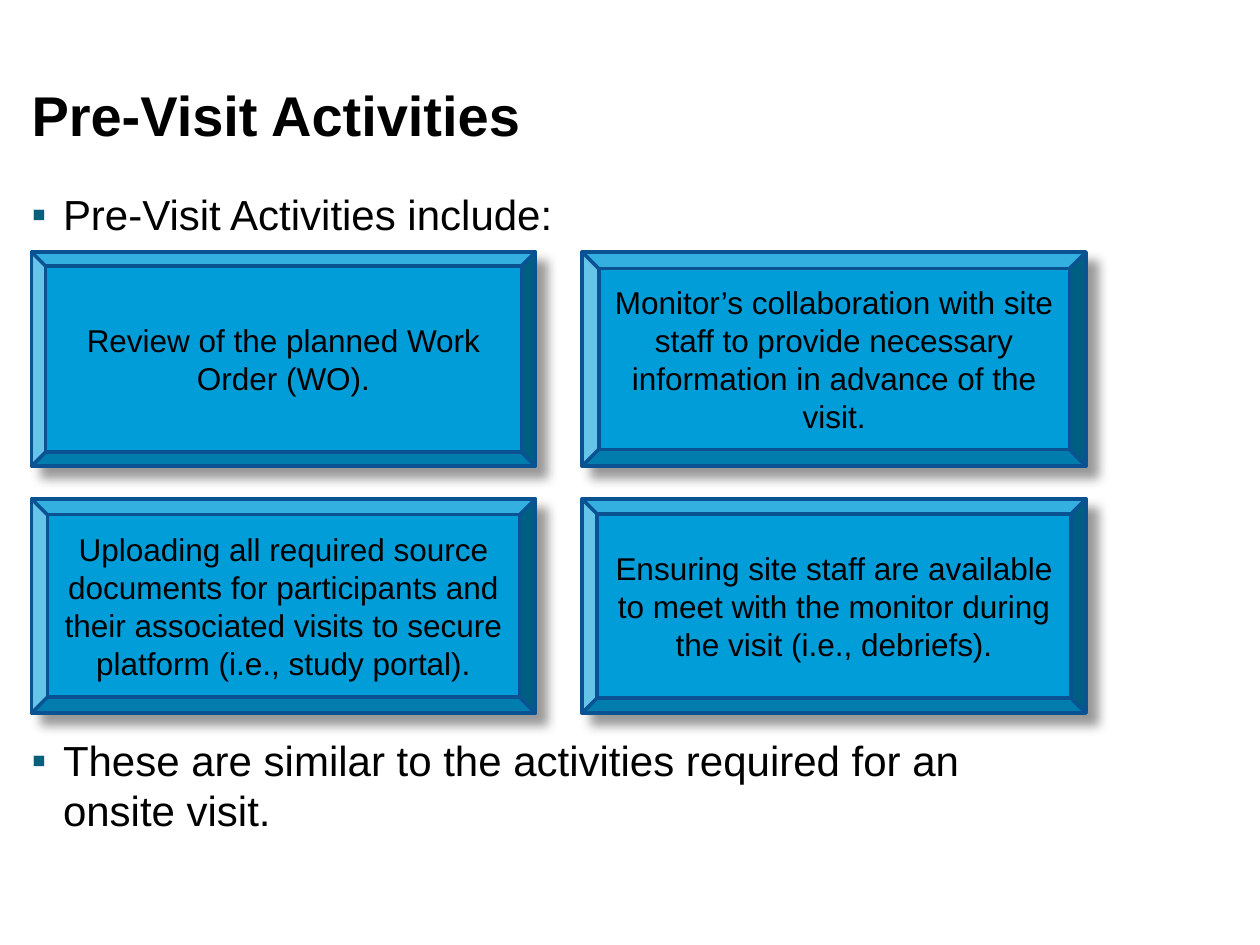
from lxml import etree
from pptx import Presentation
from pptx.dml.color import RGBColor
from pptx.enum.shapes import MSO_SHAPE
from pptx.enum.text import MSO_ANCHOR, PP_ALIGN
from pptx.oxml.ns import qn
from pptx.util import Inches, Pt

FONT = "Arial"
BLACK = "000000"
BULLET = "04617B"
TILE_FILL = "009DD9"
TILE_LINE = "0B5292"

LEFT = 0.25
TEXT_WIDTH = 8.25
TILE_WIDTH, TILE_HEIGHT = 4, 1.7
COLUMN_STEP, ROW_STEP = 4.37, 1.96

# Each row holds (text, bevel depth) for its tiles.
ACTIVITIES = [
    [
        ("Review of the planned Work Order (WO).", 0.066),
        ("Monitor’s collaboration with site staff to provide necessary "
         "information in advance of the visit.", 0.078),
    ],
    [
        ("Uploading all required source documents for participants and their "
         "associated visits to secure platform (i.e., study portal).", 0.074),
        ("Ensuring site staff are available to meet with the monitor during "
         "the visit (i.e., debriefs).", 0.07),
    ],
]


def color(hex_value):
    return RGBColor.from_string(hex_value)


def set_font(para, size, bold=False):
    para.font.name = FONT
    para.font.size = Pt(size)
    para.font.bold = bold
    para.font.color.rgb = color(BLACK)


def add_text(page, text, left, top, width, height):
    box = page.shapes.add_textbox(
        Inches(left), Inches(top), Inches(width), Inches(height))
    frame = box.text_frame
    frame.word_wrap = True
    frame.margin_left = frame.margin_right = 0
    frame.margin_top = frame.margin_bottom = 0
    frame.text = text
    return frame


def add_title(page, text, left, top, width, height):
    frame = add_text(page, text, left, top, width, height)
    frame.margin_top = Inches(0.05)
    frame.vertical_anchor = MSO_ANCHOR.BOTTOM
    set_font(frame.paragraphs[0], 32, bold=True)


def add_bullet(page, text, left, top, width, height):
    para = add_text(page, text, left, top, width, height).paragraphs[0]
    properties = para._p.get_or_add_pPr()
    properties.set("marL", str(Inches(0.25)))
    properties.set("indent", str(-Inches(0.25)))
    bullet_color = etree.SubElement(properties, qn("a:buClr"))
    etree.SubElement(bullet_color, qn("a:srgbClr"), val=BULLET)
    etree.SubElement(properties, qn("a:buFont"), typeface=FONT)
    etree.SubElement(properties, qn("a:buChar"), char="▪")
    set_font(para, 24)


def add_shadow(shape):
    """Give the shape a soft shadow to the lower right."""
    shape.shadow.inherit = False
    effects = shape._element.spPr.find(qn("a:effectLst"))
    shadow = etree.SubElement(
        effects, qn("a:outerShdw"), blurRad=str(Pt(6)), dist=str(Pt(8)),
        dir=str(45 * 60000), algn="tl", rotWithShape="0")
    shade = etree.SubElement(shadow, qn("a:srgbClr"), val=BLACK)
    etree.SubElement(shade, qn("a:alpha"), val="40000")


def add_tile(page, text, depth, left, top):
    tile = page.shapes.add_shape(
        MSO_SHAPE.BEVEL, Inches(left), Inches(top),
        Inches(TILE_WIDTH), Inches(TILE_HEIGHT))
    tile.adjustments[0] = depth
    tile.fill.solid()
    tile.fill.fore_color.rgb = color(TILE_FILL)
    tile.line.color.rgb = color(TILE_LINE)
    tile.line.width = Pt(2)
    add_shadow(tile)
    frame = tile.text_frame
    frame.word_wrap = True
    frame.vertical_anchor = MSO_ANCHOR.MIDDLE
    frame.text = text
    para = frame.paragraphs[0]
    para.alignment = PP_ALIGN.CENTER
    set_font(para, 18)


def add_activity_grid(page, left, top):
    for row, tiles in enumerate(ACTIVITIES):
        for column, (text, depth) in enumerate(tiles):
            add_tile(page, text, depth,
                     left + column * COLUMN_STEP, top + row * ROW_STEP)


def main():
    deck = Presentation()
    deck.slide_width, deck.slide_height = Inches(10), Inches(7.5)
    page = deck.slides.add_slide(deck.slide_layouts[6])
    add_title(page, "Pre-Visit Activities", LEFT, 0.17, TEXT_WIDTH, 1)
    add_bullet(page, "Pre-Visit Activities include:",
               LEFT, 1.5, TEXT_WIDTH, 0.5)
    add_bullet(page, "These are similar to the activities required for an "
               "onsite visit.", LEFT, 5.83, TEXT_WIDTH, 0.83)
    add_activity_grid(page, LEFT, 2)
    deck.save("out.pptx")


if __name__ == "__main__":
    main()
